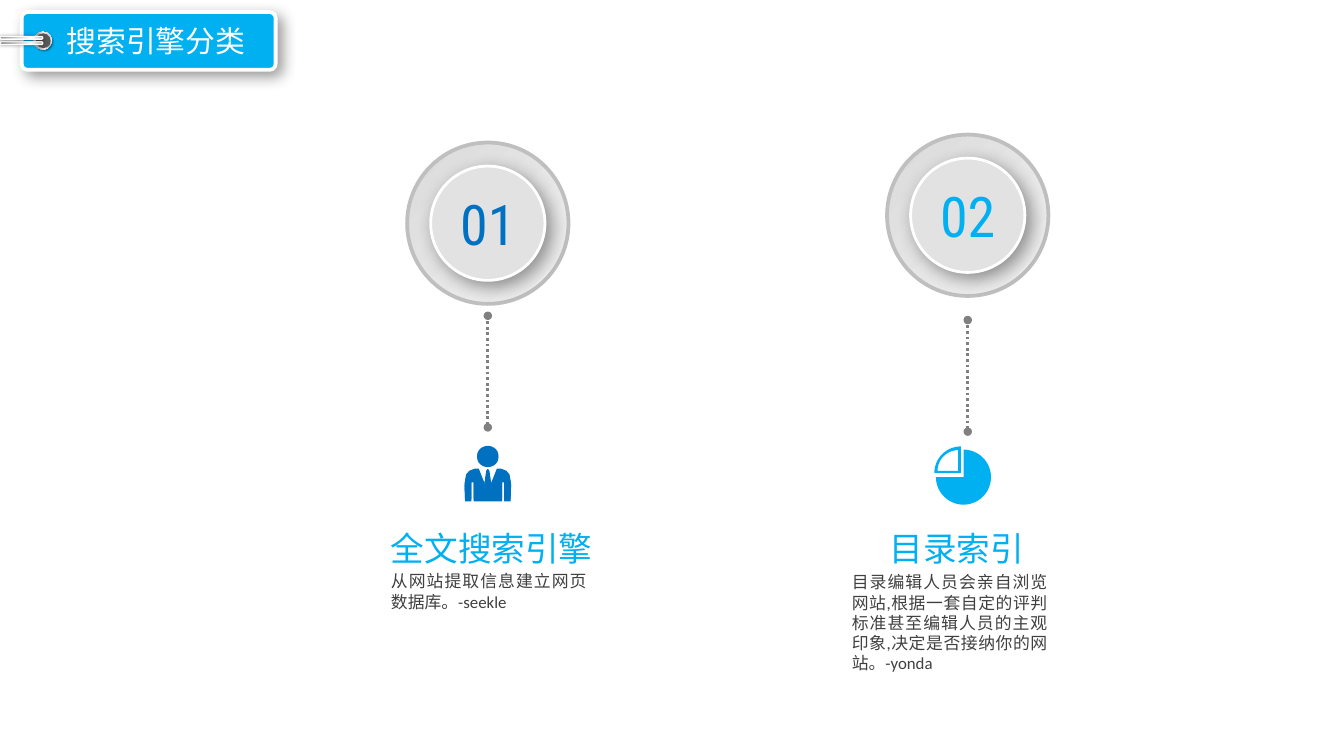
from math import cos, radians, sin

from lxml import etree
from pptx import Presentation
from pptx.dml.color import RGBColor
from pptx.enum.dml import MSO_LINE
from pptx.enum.shapes import MSO_CONNECTOR, MSO_SHAPE
from pptx.enum.text import PP_ALIGN
from pptx.oxml.ns import qn
from pptx.util import Cm, Pt

ELLIPSE = MSO_SHAPE.OVAL
ROUNDED = MSO_SHAPE.ROUNDED_RECTANGLE
STRAIGHT = MSO_CONNECTOR.STRAIGHT
DOTTED = MSO_LINE.ROUND_DOT
LEFT, CENTER, JUSTIFY = PP_ALIGN.LEFT, PP_ALIGN.CENTER, PP_ALIGN.JUSTIFY

BLUE, SKY, WHITE, GREY = "0070C0", "00B0F0", "FFFFFF", "808080"
CJK = "Noto Sans CJK SC"
RING_FILL = [(0, "D9D9D9"), (100, "F2F2F2")]
EYELET_FILL = [(0, "FFFFFF"), (17, "A6A6A6"), (35, "F2F2F2"),
               (55, "A6A6A6"), (75, "F2F2F2"), (100, "A6A6A6")]
CORD_FILL = [(0, "808080"), (23, "A6A6A6"), (52, "D9D9D9"),
             (74, "FFFFFF"), (100, "A6A6A6")]

# Right half of the jacket: cm from the middle of the collar
JACKET = [(0, 0), (0.03, 0.04), (0.06, 0.25), (0.01, 0.39), (0.1, 0.18),
          (0.17, 0), (0.25, 0), (0.35, 0.04), (0.41, 0.11), (0.44, 0.28),
          (0.43, 0.58), (0.31, 0.58), (0.31, 0.22), (0.27, 0.22), (0.27, 0.58)]


def color(value):
    return RGBColor.from_string(value)


def arc(x, y, radius_x, radius_y, start, end):
    """Points along an arc, clockwise in degrees from the right."""
    return [(x + radius_x * cos(radians(a)), y + radius_y * sin(radians(a)))
            for a in range(start, end + 1, 5)]


class Deck:
    def __init__(self, width, height):
        self.prs = Presentation()
        self.prs.slide_width, self.prs.slide_height = Cm(width), Cm(height)
        self.slide = self.prs.slides.add_slide(self.prs.slide_layouts[6])
        self.shapes = self.slide.shapes

    def paint(self, shape, fill, line=None, shadow=None, angle=45):
        if isinstance(fill, str):
            shape.fill.solid()
            shape.fill.fore_color.rgb = color(fill)
        else:
            shape.fill.gradient()
            shape.fill.gradient_angle = 360 - angle
            stops = shape._element.spPr.find(qn("a:gradFill")).find(qn("a:gsLst"))
            stops.clear()
            for position, shade in fill:
                stop = etree.SubElement(stops, qn("a:gs"), pos=str(position * 1000))
                etree.SubElement(stop, qn("a:srgbClr"), val=shade)
        if line:
            shape.line.color.rgb = color(line[0])
            shape.line.width = Pt(line[1])
        else:
            shape.line.fill.background()
        shape.shadow.inherit = False
        if shadow:
            blur, distance, direction = shadow
            effects = shape._element.spPr.find(qn("a:effectLst"))
            outer = etree.SubElement(
                effects, qn("a:outerShdw"), blurRad=str(Pt(blur)),
                dist=str(Pt(distance)), dir=str(direction * 60000),
                algn="ctr", rotWithShape="0")
            black = etree.SubElement(outer, qn("a:srgbClr"), val="000000")
            etree.SubElement(black, qn("a:alpha"), val="40000")

    def shape(self, kind, left, top, width, height, fill,
              rounding=None, rotation=0, **style):
        shape = self.shapes.add_shape(kind, Cm(left), Cm(top), Cm(width), Cm(height))
        if rounding is not None:
            shape.adjustments[0] = rounding
        shape.rotation = rotation
        self.paint(shape, fill, **style)

    def circle(self, x, y, diameter, fill, **style):
        self.shape(ELLIPSE, x - diameter / 2, y - diameter / 2,
                   diameter, diameter, fill, **style)

    def outline(self, contours, fill):
        contours = [[(Cm(x), Cm(y)) for x, y in points] for points in contours]
        builder = self.shapes.build_freeform(*contours[0][0])
        for number, points in enumerate(contours):
            if number:
                builder.move_to(*points[0])
            builder.add_line_segments(points[1:], close=True)
        self.paint(builder.convert_to_shape(), fill)

    def dotted_line(self, x, top, bottom):
        line = self.shapes.add_connector(STRAIGHT, Cm(x), Cm(top), Cm(x), Cm(bottom))
        line.line.color.rgb = color(GREY)
        line.line.width = Pt(1.5)
        line.line.dash_style = DOTTED
        etree.SubElement(line._element.spPr, qn("a:effectLst"))

    def text(self, words, left, top, width, height, size, shade,
             font="Calibri", align=LEFT):
        frame = self.shapes.add_textbox(
            Cm(left), Cm(top), Cm(width), Cm(height)).text_frame
        frame.word_wrap = True
        paragraph = frame.paragraphs[0]
        paragraph.alignment = align
        run = paragraph.add_run()
        run.text = words
        for name, value in {"size": Pt(size), "name": font}.items():
            setattr(run.font, name, value)
        run.font.color.rgb = color(shade)
        etree.SubElement(run._r.get_or_add_rPr(), qn("a:ea"), typeface=CJK)


def draw_person(deck, x):
    half = JACKET + [(-dx, dy) for dx, dy in JACKET[:0:-1]]
    for shift in (0.04, 0):
        deck.outline([arc(x, 8.61 + shift, 0.2, 0.18, 0, 355)], BLUE)
        deck.outline([[(x + dx, 8.86 + shift + dy) for dx, dy in half]], BLUE)


def draw_pie(deck, x):
    center, corner, hole = (x - 0.08, 9.02), (x - 0.13, 8.94), (x - 0.18, 8.9)
    deck.outline([arc(*center, 0.52, 0.52, 270, 540) + [center]], SKY)
    deck.outline([arc(*corner, 0.5, 0.5, 180, 270) + [corner],
                  arc(*hole, 0.39, 0.39, 180, 270) + [hole]], SKY)


def main():
    deck = Deck(25.4, 14.29)

    # Title tag with eyelet and cord
    deck.shape(ROUNDED, 0.41, 0.23, 4.8, 1.09, SKY, rounding=0.1,
               line=(WHITE, 2), shadow=(8, 4, 45))
    deck.circle(0.81, 0.77, 0.34, EYELET_FILL, rotation=270, shadow=(1, 1, 45))
    deck.circle(0.82, 0.77, 0.28, "595959", rotation=270)
    for cord_top in (0.41, 0.31):
        deck.shape(ROUNDED, 0.38, cord_top, 0.05, 0.81, CORD_FILL, rounding=0.5,
                   rotation=270, line=(WHITE, 0.75), shadow=(2, 0, 0), angle=90)
    deck.text("搜索引擎分类", 0.69, 0.3, 4.52, 0.94, 16, WHITE, CJK, CENTER)

    # Two kinds of search engine:
    # number, shade, middle x, ring y, dots top, icon, heading, its left,
    # description, its left, top and height
    kinds = [
        ("01", BLUE, 9.22, 4.22, 5.89, draw_person, "全文搜索引擎", 7.14,
         "从网站提取信息建立网页数据库。-seekle", 7.14, 10.67, 1.02),
        ("02", SKY, 18.29, 4.07, 5.97, draw_pie, "目录索引", 16.56,
         "目录编辑人员会亲自浏览网站,根据一套自定的评判标准甚至编辑人员的主观印象,"
         "决定是否接纳你的网站。-yonda", 15.85, 10.69, 2.18),
    ]
    for (number, shade, x, ring_y, dots_top, draw_icon, heading, heading_left,
         description, left, top, height) in kinds:
        # Numbered ring
        deck.circle(x, ring_y, 3.05, RING_FILL, line=("BFBFBF", 2))
        deck.circle(x, ring_y, 2.16, "E2E2E2", line=(WHITE, 1.5),
                    shadow=(10, 4, 45))
        deck.text(number, x - 0.89, ring_y - 0.77, 1.78, 1.55, 30, shade,
                  "Roboto Condensed", CENTER)

        # Dotted link and icon
        deck.dotted_line(x, dots_top + 0.18, dots_top + 2.23)
        for dot_y in (dots_top + 0.08, dots_top + 2.19):
            deck.circle(x, dot_y, 0.16, GREY)
        draw_icon(deck, x)

        # Heading and description
        deck.text(heading, heading_left, 9.86, 4.52, 1.02, 18, SKY)
        deck.text(description, left, top, 4.19, height, 9, "404040", align=JUSTIFY)

    deck.prs.save("out.pptx")


if __name__ == "__main__":
    main()
